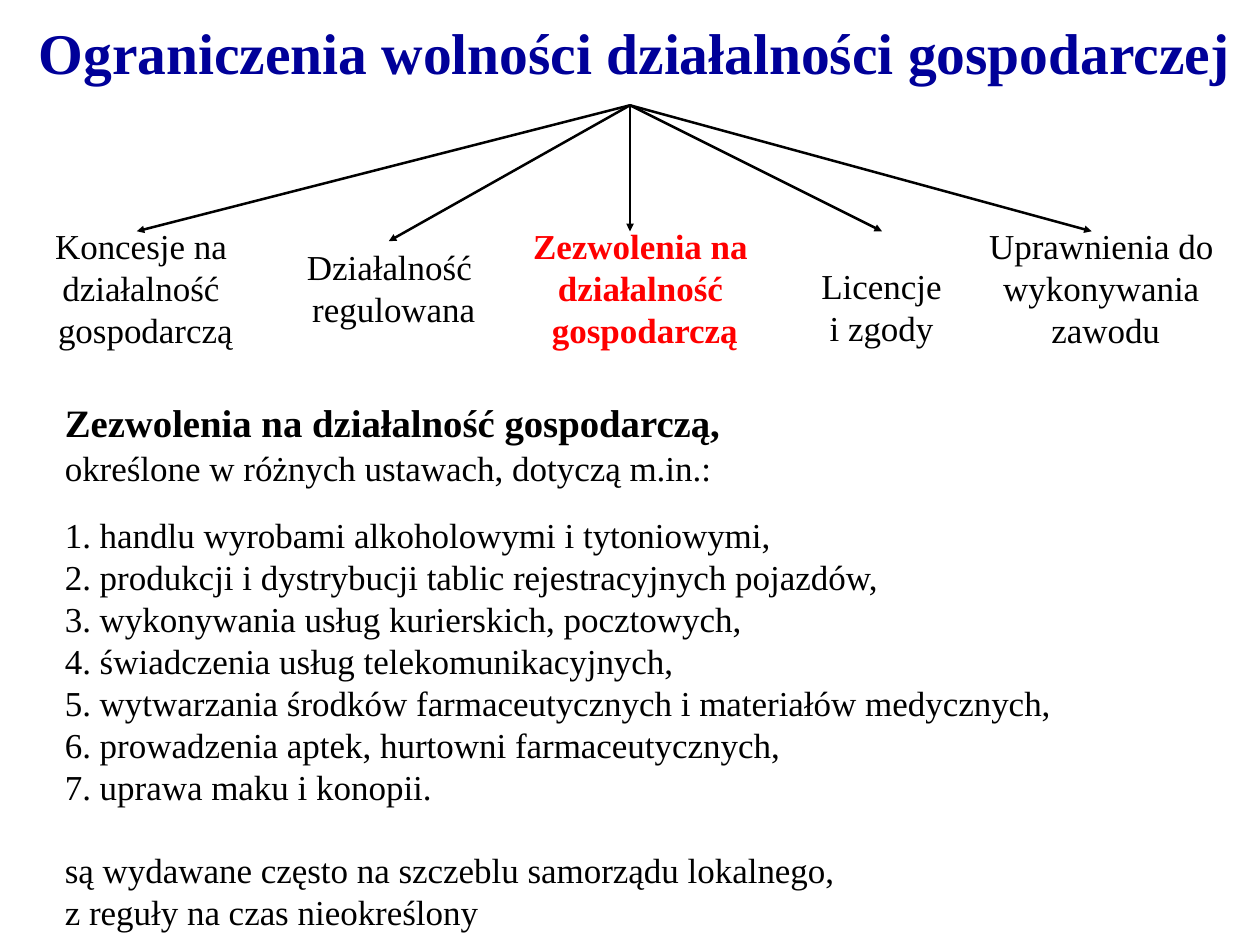
from dataclasses import dataclass

from lxml.etree import SubElement
from pptx import Presentation
from pptx.dml.color import RGBColor
from pptx.enum.shapes import MSO_CONNECTOR
from pptx.enum.text import MSO_AUTO_SIZE, PP_ALIGN
from pptx.oxml.ns import qn
from pptx.slide import Slide
from pptx.util import Inches, Pt

COLORS = {"title": "000099", "text": "000000", "accent": "FF0000"}
COLS, ROWS = 140, 105
ROOT = (70, 11.7)
BRANCHES = [
    (16.15, 24.5, (15.2, 25.7), ["Koncesje na ", "działalność ", "gospodarczą"], False),
    (43.75, 26.8, (43.2, 26.8), ["Działalność ", "regulowana"], False),
    (71.65, 24.5, (70, 25.7), ["Zezwolenia na ", "działalność ", "gospodarczą"], True),
    (97.95, 28.9, (98, 25.7), ["Licencje", "i zgody"], False),
    (122.85, 24.5, (121.3, 25.7), ["Uprawnienia do ", "wykonywania ", "zawodu"], False),
]
PERMITS = [
    "handlu wyrobami alkoholowymi i tytoniowymi,",
    "produkcji i dystrybucji tablic rejestracyjnych pojazdów,",
    "wykonywania usług kurierskich, pocztowych,",
    "świadczenia usług telekomunikacyjnych,",
    "wytwarzania środków farmaceutycznych i materiałów medycznych,",
    "prowadzenia aptek, hurtowni farmaceutycznych,",
    "uprawa maku i konopii.",
]


@dataclass
class Board:
    slide: Slide
    col: float
    row: float
    font: str = "Times New Roman"
    size: float = 28

    def place(self, x, y):
        return round(x * self.col), round(y * self.row)

    def text(self, x, y, w, h, lines, color="text", size=None, bold=False,
             align=PP_ALIGN.LEFT, inset=(0.1, 0.05)):
        sp = self.slide.shapes.add_textbox(*self.place(x, y), *self.place(w, h))
        tf = sp.text_frame
        tf.word_wrap = False
        tf.auto_size = MSO_AUTO_SIZE.SHAPE_TO_FIT_TEXT
        tf.margin_left = tf.margin_right = Inches(inset[0])
        tf.margin_top = tf.margin_bottom = Inches(inset[1])
        for i, line in enumerate(lines):
            p = tf.paragraphs[0] if i == 0 else tf.add_paragraph()
            p.text = line
            p.alignment = align
            p.font.name = self.font
            p.font.size = Pt(size or self.size)
            p.font.bold = bold
            p.font.color.rgb = RGBColor.from_string(COLORS[color])
        return tf.paragraphs

    def arrow(self, start, end):
        line = self.slide.shapes.add_connector(
            MSO_CONNECTOR.STRAIGHT, *self.place(*start), *self.place(*end))
        line.line.color.rgb = RGBColor.from_string(COLORS["text"])
        line.line.width = Pt(2)
        SubElement(line.line._get_or_add_ln(), qn("a:tailEnd"), type="triangle")
        SubElement(line._element.spPr, qn("a:effectLst"))

    def branch(self, center, top, tip, lines, active):
        w, h = 28, 4.7 * len(lines) + 1.3
        self.text(center - w / 2, top, w, h, lines, "accent" if active else "text",
                  bold=active, align=PP_ALIGN.CENTER)
        self.arrow(ROOT, tip)


def main():
    prs = Presentation()
    prs.slide_width, prs.slide_height = Inches(14), Inches(10.5)
    s = prs.slides.add_slide(prs.slide_layouts[6])
    board = Board(s, prs.slide_width / COLS, prs.slide_height / ROWS)
    wide = (0.14, 0.07)

    board.text(2.9, 1.2, 135.9, 9.1, ["Ograniczenia wolności działalności gospodarczej"],
               "title", 46, True, inset=wide)
    for branch in BRANCHES:
        board.branch(*branch)

    lines = ["Zezwolenia na działalność gospodarczą,",
             "określone w różnych ustawach, dotyczą m.in.:"]
    lines += [f"{n}. {permit}" for n, permit in enumerate(PERMITS, 1)]
    lines += ["są wydawane często na szczeblu samorządu lokalnego,",
              "z reguły na czas nieokreślony"]
    body = board.text(5.8, 43.6, 113.5, 61.4, lines, inset=wide)
    body[0].font.size = Pt(31)
    body[0].font.bold = True
    body[0].space_after = Pt(1)
    body[1].space_after = Pt(20)
    body[-2].space_before = Pt(33)

    prs.save("out.pptx")


if __name__ == "__main__":
    main()
